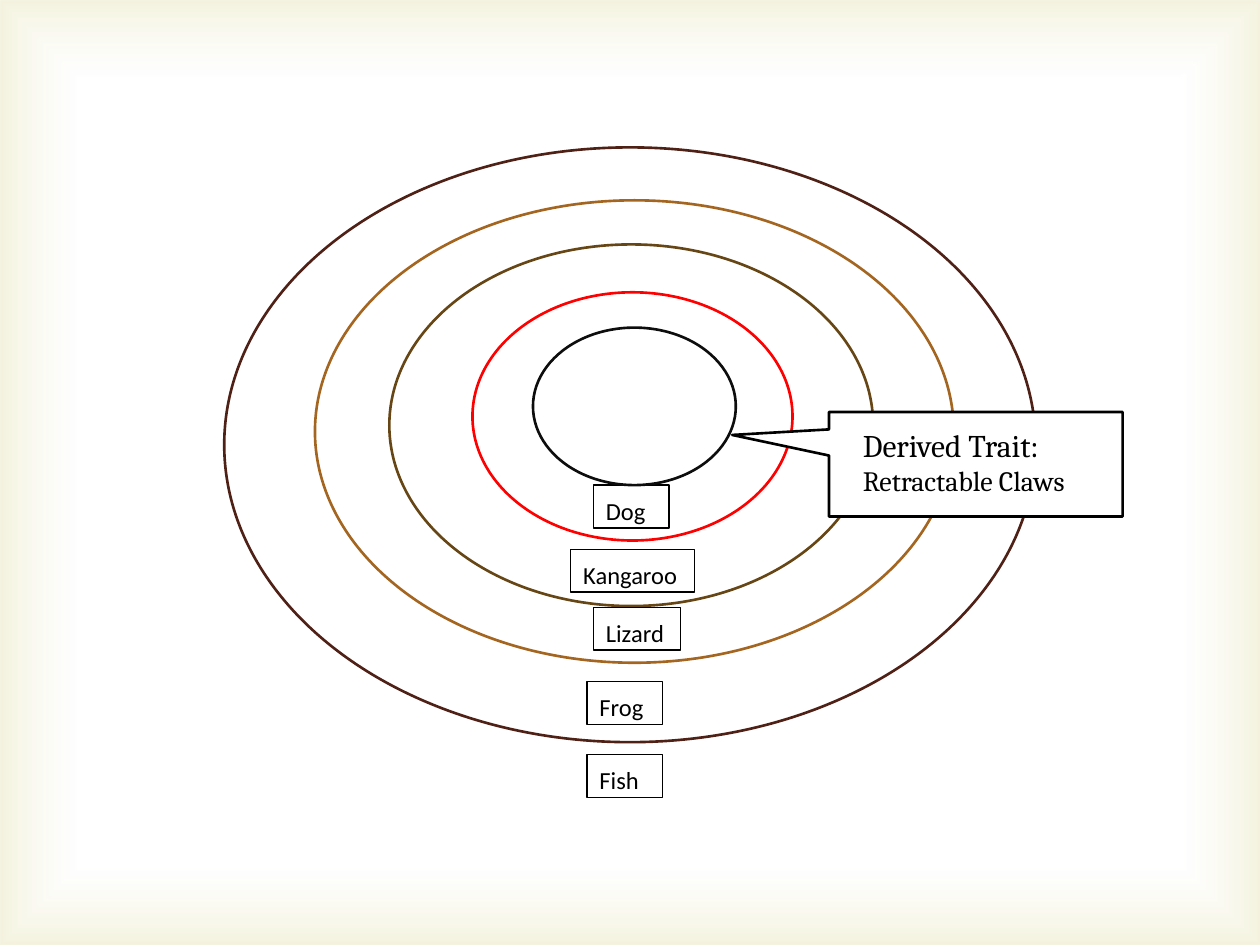
from pptx import Presentation, util as u
from pptx.dml import color
from pptx.enum import shapes, text
from pptx.oxml import parse_xml
from pptx.oxml.ns import nsdecls

RINGS = [
    ((1.78, 1.17, 6.44, 4.72), "4F2015"),
    ((2.5, 1.59, 5.07, 3.67), "A36520"),
    ((3.09, 1.94, 3.84, 2.87), "674616"),
    ((3.75, 2.32, 2.54, 1.97), "FF0000"),
]
INNER_RING = ((4.23, 2.6, 1.61, 1.25), "0D0D0D")
ANIMALS = [
    ("Fish", 4.66, 5.99, 0.6),
    ("Frog", 4.66, 5.41, 0.6),
    ("Lizard", 4.71, 4.82, 0.69),
    ("Kangaroo", 4.53, 4.36, 0.98),
    ("Dog", 4.71, 3.85, 0.6),
]
LABEL_HEIGHT = 0.34
LABEL_FORMAT = {"line_spacing": 1.15, "space_after": u.Pt(10)}
TRAIT = [("Derived Trait: ", 18), ("Retractable Claws", 16)]
BORDER_STOPS = [(83, "FFFFFF", 11), (100, "D1CA75", 23)]


def rgb(value):
    return color.RGBColor.from_string(value)


def add_shape(slide, kind, box, fill=None, line=None, weight=0.75):
    shape = slide.shapes.add_shape(kind, *map(u.Inches, box))
    shape.shadow.inherit = False
    for part, value in ((shape.fill, fill), (shape.line.fill, line)):
        if value:
            part.solid()
            part.fore_color.rgb = rgb(value)
        else:
            part.background()
    if line:
        shape.line.width = u.Pt(weight)
    return shape


def add_ring(slide, box, line):
    add_shape(slide, shapes.MSO_SHAPE.OVAL, box, line=line, weight=1.5)


def write(shape, runs, font_name, paragraph_format):
    frame = shape.text_frame
    frame.word_wrap = True
    frame.vertical_anchor = text.MSO_ANCHOR.TOP
    paragraph = frame.paragraphs[0]
    paragraph.alignment = text.PP_ALIGN.LEFT
    for name, value in paragraph_format.items():
        setattr(paragraph, name, value)
    for words, size in runs:
        run = paragraph.add_run()
        run.text = words
        for name, value in {"name": font_name, "size": u.Pt(size)}.items():
            setattr(run.font, name, value)
        run.font.color.rgb = rgb("000000")


def add_border_glow(slide):
    shape = add_shape(slide, shapes.MSO_SHAPE.RECTANGLE, (0, 0, 10, 7.5), "FFFFFF")
    stops = "".join(
        f'<a:gs pos="{position * 1000}"><a:srgbClr val="{value}">'
        f'<a:alpha val="{opacity * 1000}"/></a:srgbClr></a:gs>'
        for position, value, opacity in BORDER_STOPS
    )
    gradient = parse_xml(
        f'<a:gradFill {nsdecls("a")} rotWithShape="1"><a:gsLst>{stops}</a:gsLst>'
        '<a:path path="rect"><a:fillToRect l="50000" t="50000" r="50000" b="50000"/>'
        "</a:path></a:gradFill>"
    )
    properties = shape.element.spPr
    properties.replace(properties.find("{*}solidFill"), gradient)


def main():
    presentation = Presentation()
    presentation.slide_width = u.Inches(10)
    presentation.slide_height = u.Inches(7.5)
    slide = presentation.slides.add_slide(presentation.slide_layouts[6])

    add_border_glow(slide)
    for box, line in RINGS:
        add_ring(slide, box, line)
    for animal, left, top, width in ANIMALS:
        label = add_shape(slide, shapes.MSO_SHAPE.RECTANGLE,
                          (left, top, width, LABEL_HEIGHT), "FFFFFF", "000000")
        write(label, [(animal, 14)], "Calibri", LABEL_FORMAT)
    add_ring(slide, *INNER_RING)

    callout = add_shape(slide, shapes.MSO_SHAPE.RECTANGULAR_CALLOUT,
                        (6.58, 3.27, 2.33, 0.83), "FFFFFF", "000000", 1.5)
    callout.adjustments[0] = -0.83
    callout.adjustments[1] = -0.28
    trait = add_shape(slide, shapes.MSO_SHAPE.RECTANGLE,
                      (6.75, 3.33, 2, 0.67), "FFFFFF", "FFFFFF")
    write(trait, TRAIT, "Cambria", {})
    trait.text_frame.auto_size = text.MSO_AUTO_SIZE.SHAPE_TO_FIT_TEXT

    presentation.save("out.pptx")


if __name__ == "__main__":
    main()
